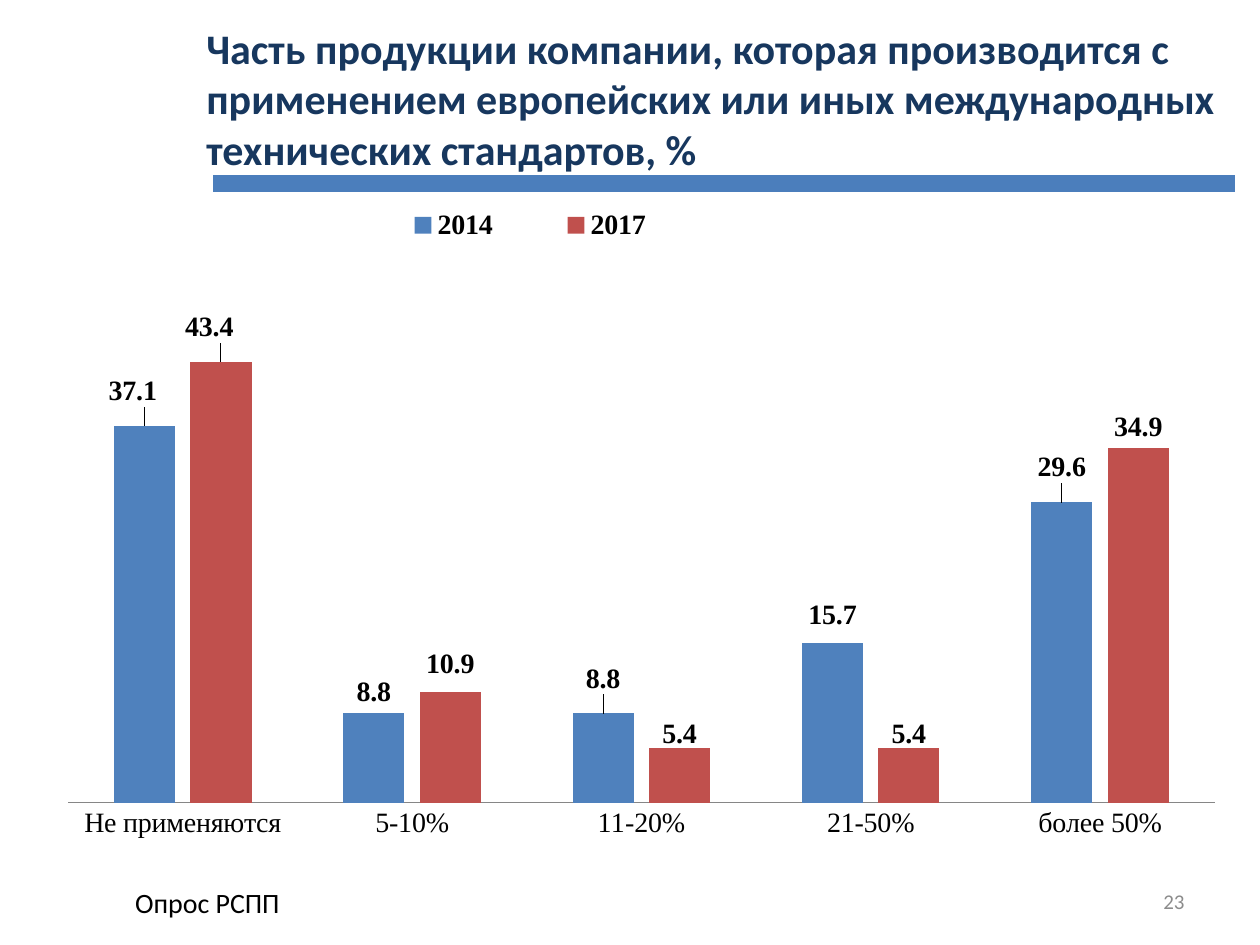
from lxml import etree
from pptx import Presentation, util as u
from pptx.chart.data import CategoryChartData
from pptx.dml.color import RGBColor
from pptx.enum import chart as ch, shapes, text
from pptx.oxml import parse_xml
from pptx.oxml.ns import nsdecls, qn

CATEGORIES = ["Не применяются", "5-10%", "11-20%", "21-50%", "более 50%"]
SERIES = [
    ("2014", "4F81BD", [37.1, 8.8, 8.8, 15.7, 29.6],
     [(-0.01, -0.02), (0, 0), (0, -0.02), (0, -0.01), (0, -0.02)]),
    ("2017", "C0504D", [43.4, 10.9, 5.4, 5.4, 34.9],
     [(-0.01, -0.02), (0, -0.01), (0, 0.01), (0, 0.01), (0, 0)]),
]


def rgb(color):
    """Turn a hex string into a colour."""
    return RGBColor.from_string(color)


def style_font(font, size, color="000000", name="Times New Roman", bold=False):
    """Set typeface, size, colour and weight."""
    font.name, font.size, font.bold = name, u.Pt(size), bold
    font.color.rgb = rgb(color)


def add_text(s, box, words, size, color, align, bold=False, anchor="TOP"):
    """Add a wrapped one-paragraph text box."""
    tf = s.shapes.add_textbox(*(u.Cm(v) for v in box)).text_frame
    tf.word_wrap = True
    tf.vertical_anchor = text.MSO_ANCHOR[anchor]
    p = tf.paragraphs[0]
    p.text, p.alignment = words, text.PP_ALIGN[align]
    style_font(p.font, size, color, "Calibri", bold)


def add_rule(s, left, right, top, color, width):
    """Add a horizontal line without a shadow."""
    line = s.shapes.add_connector(
        shapes.MSO_CONNECTOR.STRAIGHT, u.Cm(left), u.Cm(top), u.Cm(right), u.Cm(top))
    line.line.color.rgb, line.line.width = rgb(color), u.Pt(width)
    etree.SubElement(line._element.spPr, qn("a:effectLst"))


def layout(*values, plot=False):
    """Build a manual layout from x, y and optional width and height."""
    target = '<c:layoutTarget val="inner"/>' if plot else ""
    modes = '<c:xMode val="edge"/><c:yMode val="edge"/>' if len(values) == 4 else ""
    sizes = "".join(f'<c:{k} val="{v}"/>' for k, v in zip("xywh", values))
    return parse_xml(f'<c:layout {nsdecls("c")}><c:manualLayout>{target}{modes}{sizes}'
                     '</c:manualLayout></c:layout>')


def replace_layout(parent, new, before):
    """Put a layout ahead of the named child, removing any earlier one."""
    for old in parent.findall(qn("c:layout")):
        parent.remove(old)
    parent.find(qn(before)).addprevious(new)


def style_series(series, color, offsets):
    """Colour a series and place its value labels."""
    series.format.fill.solid()
    series.format.fill.fore_color.rgb = rgb(color)
    labels = series.data_labels
    labels.show_value = True
    labels.number_format, labels.number_format_is_linked = "#,##0.0", False
    labels.position = ch.XL_LABEL_POSITION.OUTSIDE_END
    style_font(labels.font, 16, bold=True)
    for i, offset in enumerate(offsets):
        label = series.points[i].data_label
        style_font(label.font, 16, bold=True)
        label.position = ch.XL_LABEL_POSITION.OUTSIDE_END
        item = next(d for d in labels._element.findall(qn("c:dLbl"))
                    if d.find(qn("c:idx")).get("val") == str(i))
        item.find(qn("c:idx")).addnext(layout(*offset))


def add_survey_chart(s, box):
    """Add the clustered columns that compare the two years."""
    data = CategoryChartData(number_format="0.0")
    data.categories = CATEGORIES
    for name, _, values, _ in SERIES:
        data.add_series(name, values)
    chart = s.shapes.add_chart(
        ch.XL_CHART_TYPE.COLUMN_CLUSTERED, *(u.Cm(v) for v in box), data).chart
    style_font(chart.font, 10)
    chart.has_title = False
    chart.has_legend = True
    legend = chart.legend
    legend.position, legend.include_in_layout = ch.XL_LEGEND_POSITION.TOP, False
    style_font(legend.font, 16, bold=True)
    replace_layout(legend._element, layout(0.26, 0.03, 0.31, 0.06), "c:overlay")

    plot = chart.plots[0]
    plot.gap_width, plot.overlap, plot.vary_by_categories = 150, -25, False
    replace_layout(plot._element.getparent(),
                   layout(0.02, 0.16, 0.98, 0.73, plot=True), "c:barChart")
    for series, (_, color, _, offsets) in zip(plot.series, SERIES):
        style_series(series, color, offsets)

    axis = chart.category_axis
    axis.major_tick_mark = ch.XL_TICK_MARK.NONE
    axis.format.line.color.rgb = rgb("868686")
    style_font(axis.tick_labels.font, 16)
    values = chart.value_axis
    values.minimum_scale, values.maximum_scale = 0, 50
    values.has_major_gridlines = values.visible = False


def main():
    """Build the slide and save it."""
    prs = Presentation()
    prs.slide_width, prs.slide_height = u.Cm(25.4), u.Cm(19.05)
    s = prs.slides.add_slide(prs.slide_layouts[6])
    add_text(s, (18.21, 17.65, 5.92, 1.02), "23", 12, "8C8C8C", "RIGHT", anchor="MIDDLE")
    add_rule(s, 4.3, 24.9, 3.7, "4B7EBC", 10)
    add_text(s, (0.3, 17.73, 5.59, 0.94), "Опрос РСПП", 16, "000000", "RIGHT")
    add_text(s, (3.91, 0.33, 21, 3.33),
             "Часть продукции компании, которая производится с применением европейских "
             "или иных международных технических стандартов, %",
             24, "17375E", "LEFT", bold=True)
    add_survey_chart(s, (0.9, 3.7, 23.6, 14.03))
    prs.save("out.pptx")


if __name__ == "__main__":
    main()
